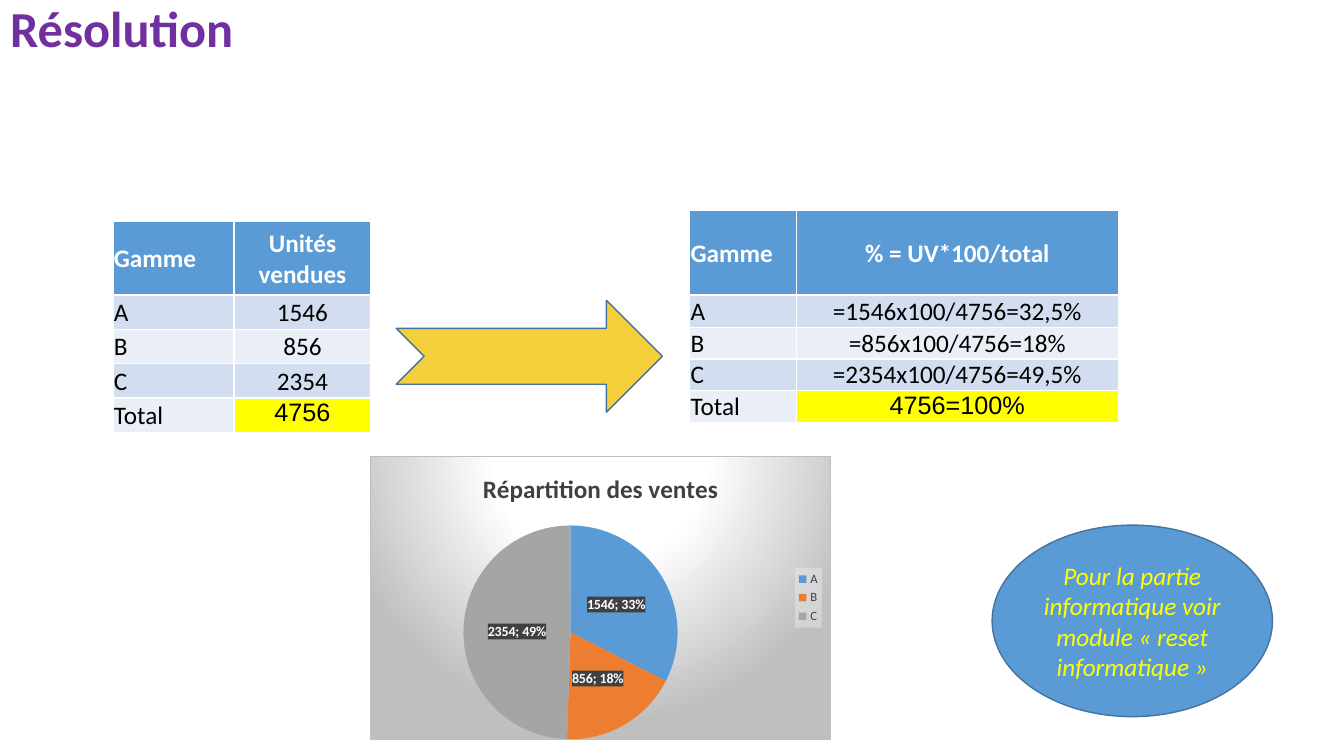
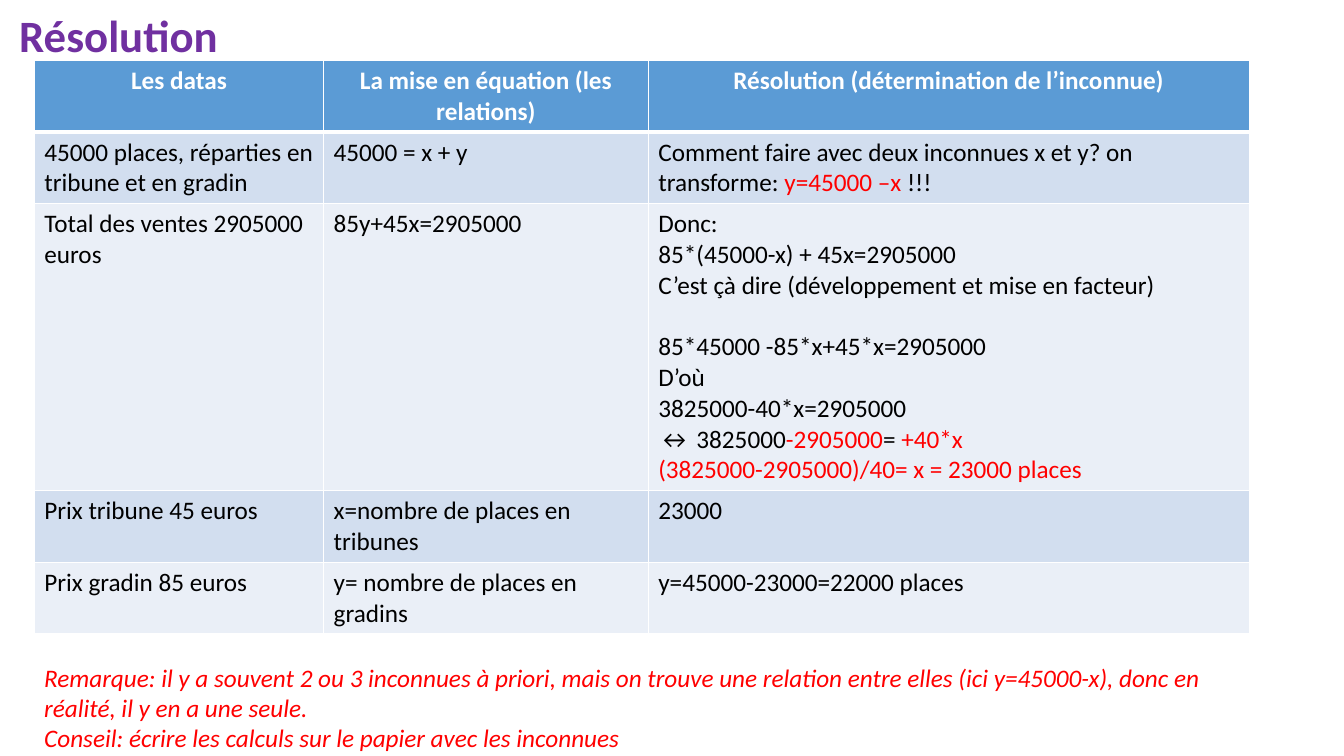
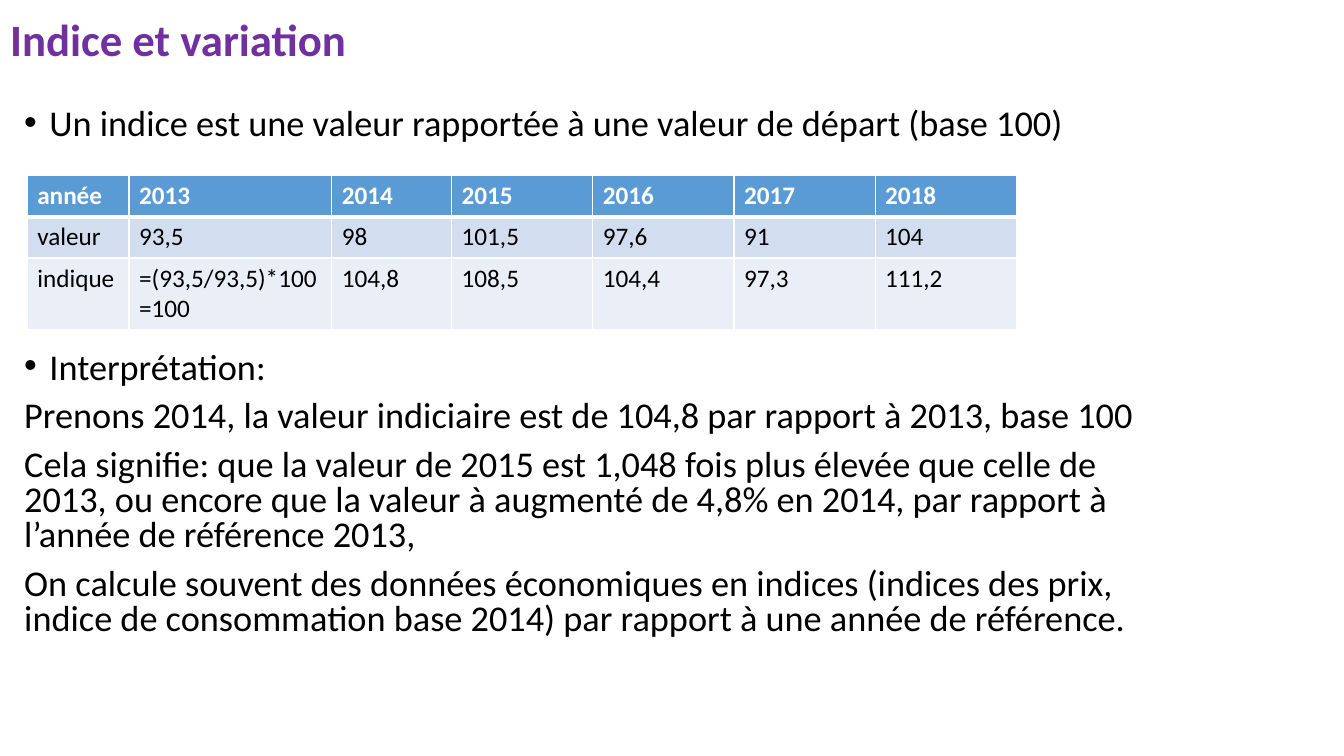
from dataclasses import dataclass

from pptx import Presentation
from pptx.chart.data import CategoryChartData
from pptx.dml.color import RGBColor
from pptx.enum.chart import XL_CHART_TYPE, XL_LABEL_POSITION, XL_LEGEND_POSITION
from pptx.enum.shapes import MSO_SHAPE
from pptx.enum.text import MSO_ANCHOR, MSO_AUTO_SIZE, PP_ALIGN
from pptx.oxml import parse_xml
from pptx.oxml.ns import nsdecls, qn
from pptx.util import Inches, Pt


@dataclass(frozen=True)
class Theme:
    font: str = "Calibri"
    total_font: str = "Arial"
    title: str = "7030A0"
    text: str = "000000"
    white: str = "FFFFFF"
    red: str = "FF0000"
    yellow: str = "FFFF00"
    gold: str = "F4D13C"
    blue: str = "5B9BD5"
    outline: str = "43739E"
    bands: tuple = ("EAEFF7", "D2DEEF")
    slices: tuple = ("5B9BD5", "ED7D31", "A5A5A5")
    chart_text: str = "404040"
    chart_edge: str = "BFBFBF"
    legend_fill: str = "F2F2F2"
    title_size: float = 32
    large_title_size: float = 36
    body_size: float = 25.9
    text_size: float = 18
    label_size: float = 10
    legend_size: float = 9


THEME = Theme()


def style_font(font, size, color, bold=False, italic=False, name=THEME.font):
    font.name, font.size, font.bold, font.italic = name, Pt(size), bold, italic
    font.color.rgb = RGBColor.from_string(color)


def write(frame, paragraphs, size, color, align=PP_ALIGN.LEFT, **style):
    """Fill a frame; a paragraph is a string or a list of (text, color) spans."""
    frame.word_wrap = True
    for index, content in enumerate(paragraphs):
        para = frame.paragraphs[0] if index == 0 else frame.add_paragraph()
        para.alignment = align
        style_font(para.font, size, color, **style)
        spans = [(content, color)] if isinstance(content, str) else content
        for text, span_color in spans:
            span = para.add_run()
            span.text = text
            if span_color != color:
                span.font.color.rgb = RGBColor.from_string(span_color)


def place(shape, at):
    shape.left, shape.top, shape.width, shape.height = map(Inches, at)


def fill_solid(target, color):
    target.fill.solid()
    target.fill.fore_color.rgb = RGBColor.from_string(color)


def chart_surface(content):
    return parse_xml(f'<c:spPr {nsdecls("c", "a")}>{content}</c:spPr>')


def solid_xml(color, opacity=100):
    return (f'<a:solidFill><a:srgbClr val="{color}"><a:alpha val="{opacity * 1000}"/>'
            '</a:srgbClr></a:solidFill>')


def set_borders(cell, top, bottom):
    """Draw white cell edges; top and bottom are widths in points."""
    properties = cell._tc.get_or_add_tcPr()
    edges = (("lnL", 1), ("lnR", 1), ("lnT", top), ("lnB", bottom))
    for index, (tag, width) in enumerate(edges):
        properties.insert(index, parse_xml(
            f'<a:{tag} {nsdecls("a")} w="{Pt(width)}">{solid_xml(THEME.white)}</a:{tag}>'))


def set_bullet(para, bullet):
    properties = para._p.get_or_add_pPr()
    indent = Inches(0.25) if bullet else 0
    properties.set("marL", str(indent))
    properties.set("indent", str(-indent))
    tag = 'buChar char="•"' if bullet else "buNone"
    properties.append(parse_xml(f"<a:{tag.split()[0]} {nsdecls('a')} {tag.partition(' ')[2]}/>"))


class SlideBuilder:
    TITLE_AND_BODY, TITLE_ONLY = 1, 5

    def __init__(self):
        self.deck = Presentation()
        self.deck.slide_width, self.deck.slide_height = Inches(13.33), Inches(7.5)
        self.page = None

    def start(self, title, at, size=THEME.title_size, layout=TITLE_ONLY):
        self.page = self.deck.slides.add_slide(self.deck.slide_layouts[layout])
        box = self.page.shapes.title
        place(box, at)
        frame = box.text_frame
        frame.auto_size = MSO_AUTO_SIZE.NONE
        frame.vertical_anchor = MSO_ANCHOR.MIDDLE
        write(frame, [title], size, THEME.title, bold=True)
        frame.paragraphs[0].line_spacing = 0.9

    def body(self, items, at):
        """Fill the body placeholder from (text, bullet, space before) items."""
        box = self.page.placeholders[1]
        place(box, at)
        frame = box.text_frame
        frame.auto_size = MSO_AUTO_SIZE.NONE
        frame.vertical_anchor = MSO_ANCHOR.TOP
        for index, (_, bullet, space) in enumerate(items):
            para = frame.paragraphs[0] if index == 0 else frame.add_paragraph()
            set_bullet(para, bullet)
            para.line_spacing, para.space_before = 0.8, Pt(space)
        for para, (text, _, _) in zip(frame.paragraphs, items):
            para.text = text
            style_font(para.font, THEME.body_size, THEME.text)

    def text(self, paragraphs, at, color, **style):
        box = self.page.shapes.add_textbox(*map(Inches, at))
        write(box.text_frame, paragraphs, THEME.text_size, color, **style)

    def shape(self, kind, at, fill, paragraphs=()):
        shape = self.page.shapes.add_shape(kind, *map(Inches, at))
        shape.shadow.inherit = False
        fill_solid(shape, fill)
        shape.line.color.rgb = RGBColor.from_string(THEME.outline)
        shape.line.width = Pt(1)
        shape.text_frame.vertical_anchor = MSO_ANCHOR.MIDDLE
        write(shape.text_frame, paragraphs, THEME.text_size, THEME.yellow,
              align=PP_ALIGN.CENTER, italic=True)

    def table(self, rows, corner, widths, heights, centred, compact=False):
        """Build a banded table; centred(row, column) tells which cells are centred."""
        size = (sum(widths), sum(heights))
        table = self.page.shapes.add_table(
            len(rows), len(widths), *map(Inches, (*corner, *size))).table
        for column, width in zip(table.columns, widths):
            column.width = Inches(width)
        for row, height in zip(table.rows, heights):
            row.height = Inches(height)
        rule = 1.5 if compact else 3
        for r, values in enumerate(rows):
            for c, value in enumerate(values):
                cell = table.cell(r, c)
                fill_solid(cell, THEME.bands[r % 2] if r else THEME.blue)
                set_borders(cell, rule if r == 1 else 1, 1 if r else rule)
                if compact:
                    cell.margin_left = cell.margin_right = cell.margin_top = Inches(0.01)
                    cell.margin_bottom = 0
                    cell.vertical_anchor = MSO_ANCHOR.MIDDLE
                write(cell.text_frame, [value] if isinstance(value, str) else value,
                      THEME.text_size, THEME.text if r else THEME.white, bold=r == 0,
                      align=PP_ALIGN.CENTER if centred(r, c) else PP_ALIGN.LEFT)
        return table

    def sales_table(self, rows, corner, widths, heights):
        """Build a compact table whose last cell is a highlighted total."""
        table = self.table(rows, corner, widths, heights, lambda r, c: c == 1, compact=True)
        total = table.cell(len(rows) - 1, 1)
        fill_solid(total, THEME.yellow)
        total.vertical_anchor = MSO_ANCHOR.TOP
        total.text_frame.paragraphs[0].font.name = THEME.total_font

    def pie(self, title, values, at):
        data = CategoryChartData()
        data.categories = list(values)
        data.add_series("Series 1", list(values.values()))
        chart = self.page.shapes.add_chart(
            XL_CHART_TYPE.PIE, *map(Inches, at), data).chart
        style_font(chart.font, THEME.label_size, THEME.text)

        chart.has_title = True
        write(chart.chart_title.text_frame, [title], THEME.text_size, THEME.chart_text,
              align=PP_ALIGN.CENTER, bold=True)
        chart.chart_title.include_in_layout = False

        chart.has_legend = True
        chart.legend.position = XL_LEGEND_POSITION.RIGHT
        chart.legend.include_in_layout = False
        style_font(chart.legend.font, THEME.legend_size, THEME.chart_text)

        plot = chart.plots[0]
        plot.vary_by_categories = True
        series = plot.series[0]
        for index, color in enumerate(THEME.slices):
            fill_solid(series.points[index].format, color)
        labels = series.data_labels
        labels.show_value = labels.show_percentage = True
        labels.show_category_name = labels.show_legend_key = False
        labels.position = XL_LABEL_POSITION.CENTER
        style_font(labels.font, THEME.label_size, THEME.white, bold=True)
        self.finish_chart(chart.element)

    @staticmethod
    def finish_chart(space):
        """Add the backgrounds, the label separator and the plot position."""
        stops = "".join(
            f'<a:gs pos="{position * 1000}"><a:srgbClr val="{color}"/></a:gs>'
            for position, color in ((0, THEME.white), (39, THEME.white), (100, THEME.chart_edge)))
        space.find(qn("c:chart")).addnext(chart_surface(
            f'<a:gradFill><a:gsLst>{stops}</a:gsLst><a:path path="circle">'
            '<a:fillToRect l="50000" t="-80000" r="50000" b="180000"/></a:path></a:gradFill>'
            f'<a:ln w="{Pt(0.75)}">{solid_xml(THEME.chart_edge)}</a:ln>'))
        for tag, color, opacity in (("c:dLbls", THEME.chart_text, 75),
                                    ("c:legend", THEME.legend_fill, 39)):
            part = next(space.iter(qn(tag)))
            part.find(qn("c:txPr")).addprevious(chart_surface(solid_xml(color, opacity)))
        next(space.iter(qn("c:dLbls"))).find(qn("c:showBubbleSize")).addnext(
            parse_xml(f'<c:separator {nsdecls("c")}>; </c:separator>'))
        plot_area = next(space.iter(qn("c:plotArea")))
        for layout in plot_area.findall(qn("c:layout")):
            plot_area.remove(layout)
        frame = "".join(f'<c:{tag} val="{value}"/>' for tag, value in (
            ("layoutTarget", "inner"), ("xMode", "edge"), ("yMode", "edge"),
            ("x", 0), ("y", 0.245), ("w", 0.87), ("h", 0.755)))
        plot_area.insert(0, parse_xml(
            f'<c:layout {nsdecls("c")}><c:manualLayout>{frame}</c:manualLayout></c:layout>'))


def build_sales(slides):
    slides.start("Résolution", (0, 0, 2.47, 0.61), THEME.large_title_size)
    slides.sales_table(
        [("Gamme", "Unités vendues"), ("A", "1546"), ("B", "856"), ("C", "2354"),
         ("Total", "4756")],
        (1.12, 2.2), (1.2, 1.36), (0.73, *[0.34] * 4))
    slides.sales_table(
        [("Gamme", "% = UV*100/total"), ("A", "=1546x100/4756=32,5%"),
         ("B", "=856x100/4756=18%"), ("C", "=2354x100/4756=49,5%"),
         ("Total", "4756=100%")],
        (6.84, 2.09), (1.06, 3.19), (0.84, *[0.31] * 4))
    slides.pie("Répartition des ventes", {"A": 1546, "B": 856, "C": 2354},
               (3.67, 4.52, 4.57, 2.82))
    slides.shape(MSO_SHAPE.NOTCHED_RIGHT_ARROW, (3.93, 2.98, 2.64, 1.11), THEME.gold)
    slides.shape(MSO_SHAPE.OVAL, (9.84, 5.21, 2.78, 1.9), THEME.blue,
                 ["Pour la partie informatique voir module « reset informatique »"])


def build_equations(slides):
    slides.start("Résolution", (0.09, 0, 11.5, 0.75))
    red, black = THEME.red, THEME.text
    steps = [
        "Donc:",
        "85*(45000-x) + 45x=2905000",
        "C’est çà dire (développement et mise en facteur)",
        "85*45000 -85*x+45*x=2905000",
        "D’où",
        "3825000-40*x=2905000",
        [("↔ 3825000", black), ("-2905000", red), ("= ", black), ("+40*x", red)],
        [("(3825000-2905000)/40= x = 23000 places", red)],
    ]
    transform = [("Comment faire avec deux inconnues x et y? on transforme: ", black),
                 ("y=45000 –x ", red), ("!!!", black)]
    table = slides.table(
        [("Les datas", "La mise en équation (les relations)",
          "Résolution (détermination de l’inconnue)"),
         ("45000 places, réparties en tribune et en gradin", "45000 = x + y", [transform]),
         ("Total des ventes 2905000 euros", "85y+45x=2905000", steps),
         ("Prix tribune 45 euros", "x=nombre de places en tribunes", "23000"),
         ("Prix gradin 85 euros", "y= nombre de places en gradins",
          "y=45000-23000=22000 places")],
        (0.34, 0.6), (2.87, 3.22, 5.96), (0.71, 0.71, 2.84, 0.71, 0.71),
        lambda r, c: r == 0)
    table.cell(2, 2).text_frame.paragraphs[3].space_before = Pt(22)
    slides.text(
        ["Remarque: il y a souvent 2 ou 3 inconnues à priori, mais on trouve une relation "
         "entre elles (ici y=45000-x), donc en réalité, il y en a une seule.",
         "Conseil: écrire les calculs sur le papier avec les inconnues"],
        (0.34, 6.52, 12.05, 1.01), red, italic=True)


def build_index(slides):
    slides.start("Indice et variation", (0, 0.09, 11.5, 0.65),
                 layout=SlideBuilder.TITLE_AND_BODY)
    slides.body(
        [("Un indice est une valeur rapportée à une valeur de départ (base 100)", True, 0),
         ("Interprétation:", True, 149),
         ("Prenons 2014, la valeur indiciaire est de 104,8 par rapport à 2013, base 100",
          False, 10),
         ("Cela signifie: que la valeur de 2015 est 1,048 fois plus élevée que celle de 2013, "
          "ou encore que la valeur à augmenté de 4,8% en 2014, par rapport à l’année de "
          "référence 2013,", False, 10),
         ("On calcule souvent des données économiques en indices (indices des prix, indice de "
          "consommation base 2014) par rapport à une année de référence.", False, 10)],
        (0.14, 1.03, 11.5, 5.44))
    slides.table(
        [("année", "2013", "2014", "2015", "2016", "2017", "2018"),
         ("valeur", "93,5", "98", "101,5", "97,6", "91", "104"),
         ("indique", ["=(93,5/93,5)*100", "=100"], "104,8", "108,5", "104,4", "97,3",
          "111,2")],
        (0.27, 1.74), (1.01, 2.01, 1.19, *[1.4] * 4), (0.41, 0.41, 0.7),
        lambda r, c: False)


def main():
    slides = SlideBuilder()
    for build in (build_sales, build_equations, build_index):
        build(slides)
    slides.deck.save("out.pptx")


if __name__ == "__main__":
    main()
